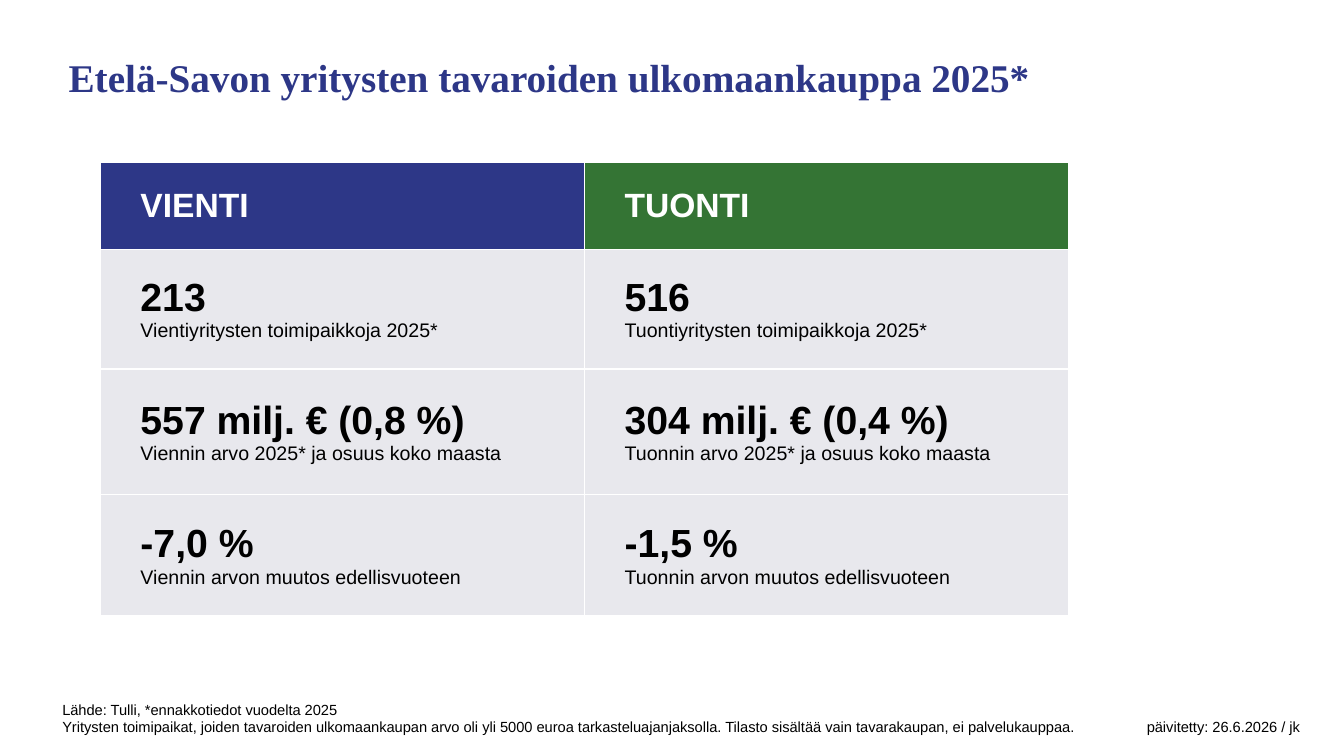
import pptx
import pptx.dml.color
import pptx.enum.text
import pptx.oxml
import pptx.oxml.ns
import pptx.util
from pptx.util import Cm

COLORS = {"export": "2D3787", "import": "347434", "cell": "E8E8ED",
          "text": "000000", "white": "FFFFFF"}
HEADERS = [("VIENTI", "export"), ("TUONTI", "import")]
FIGURES = [
    [("213", "Vientiyritysten toimipaikkoja 2025*"),
     ("516", "Tuontiyritysten toimipaikkoja 2025*")],
    [("557 milj. € (0,8 %)", "Viennin arvo 2025* ja osuus koko maasta"),
     ("304 milj. € (0,4 %)", "Tuonnin arvo 2025* ja osuus koko maasta")],
    [("-7,0 %", "Viennin arvon muutos edellisvuoteen"),
     ("-1,5 %", "Tuonnin arvon muutos edellisvuoteen")],
]
ROW_HEIGHTS = [2.19, 3.02, 3.17, 3.05]
SOURCE = "Lähde: Tulli, *ennakkotiedot vuodelta 2025"
SCOPE = ("Yritysten toimipaikat, joiden tavaroiden ulkomaankaupan arvo oli yli 5000 euroa "
         "tarkasteluajanjaksolla. Tilasto sisältää vain tavarakaupan, ei palvelukauppaa.")
UPDATED = "päivitetty: 26.6.2026 / jk"


def rgb(name):
    return pptx.dml.color.RGBColor.from_string(COLORS[name])


def add_run(p, text, size, color="text", bold=False, font="Arial"):
    r = p.add_run()
    r.text = text
    r.font.size = pptx.util.Pt(size)
    r.font.name = font
    r.font.bold = bold
    r.font.color.rgb = rgb(color)


def add_right_tab(p, position):
    ns = pptx.oxml.ns.nsdecls("a")
    tabs = pptx.oxml.parse_xml(
        f'<a:tabLst {ns}><a:tab pos="{int(position)}" algn="r"/></a:tabLst>')
    p._p.get_or_add_pPr().append(tabs)


def set_title(s, text):
    title = s.shapes.title
    title.left, title.top, title.width, title.height = Cm(1.73), Cm(1.4), Cm(26), Cm(1.25)
    tf = title.text_frame
    tf.margin_left = tf.margin_right = tf.margin_top = 0
    tf.margin_bottom = Cm(0.13)
    tf.vertical_anchor = pptx.enum.text.MSO_ANCHOR.BOTTOM
    tf.auto_size = pptx.enum.text.MSO_AUTO_SIZE.NONE
    p = tf.paragraphs[0]
    p.alignment = pptx.enum.text.PP_ALIGN.LEFT
    p.line_spacing = 1.0
    add_run(p, text, 28, "export", True, "Times New Roman")


def format_cell(cell, fill):
    cell.fill.solid()
    cell.fill.fore_color.rgb = rgb(fill)
    cell.vertical_anchor = pptx.enum.text.MSO_ANCHOR.MIDDLE
    cell.margin_left = Cm(1)
    cell.margin_right = cell.margin_top = cell.margin_bottom = Cm(0.5)


def add_trade_table(s):
    table = s.shapes.add_table(len(ROW_HEIGHTS), len(HEADERS), Cm(2.54), Cm(4.09),
                               Cm(24.4), Cm(sum(ROW_HEIGHTS))).table
    table.horz_banding = False
    for row, height in zip(table.rows, ROW_HEIGHTS):
        row.height = Cm(height)
    for col, (header, color) in enumerate(HEADERS):
        cell = table.cell(0, col)
        format_cell(cell, color)
        add_run(cell.text_frame.paragraphs[0], header, 24, "white", True)
    for row, figures in enumerate(FIGURES, 1):
        for col, (value, label) in enumerate(figures):
            cell = table.cell(row, col)
            format_cell(cell, "cell")
            tf = cell.text_frame
            add_run(tf.paragraphs[0], value, 28, bold=True)
            add_run(tf.add_paragraph(), label, 14)


def add_footnote(s):
    tf = s.shapes.add_textbox(Cm(1.32), Cm(17.53), Cm(32.4), Cm(1.15)).text_frame
    tf.word_wrap = True
    add_run(tf.paragraphs[0], SOURCE, 10.5)
    p = tf.add_paragraph()
    add_right_tab(p, Cm(31.2))
    add_run(p, SCOPE, 10.5)
    add_run(p, "\t" + UPDATED, 10.5)


def main():
    prs = pptx.Presentation()
    prs.slide_width, prs.slide_height = Cm(33.87), Cm(19.05)
    s = prs.slides.add_slide(prs.slide_layouts[5])
    set_title(s, "Etelä-Savon yritysten tavaroiden ulkomaankauppa 2025*")
    add_footnote(s)
    add_trade_table(s)
    prs.save("out.pptx")


if __name__ == "__main__":
    main()
